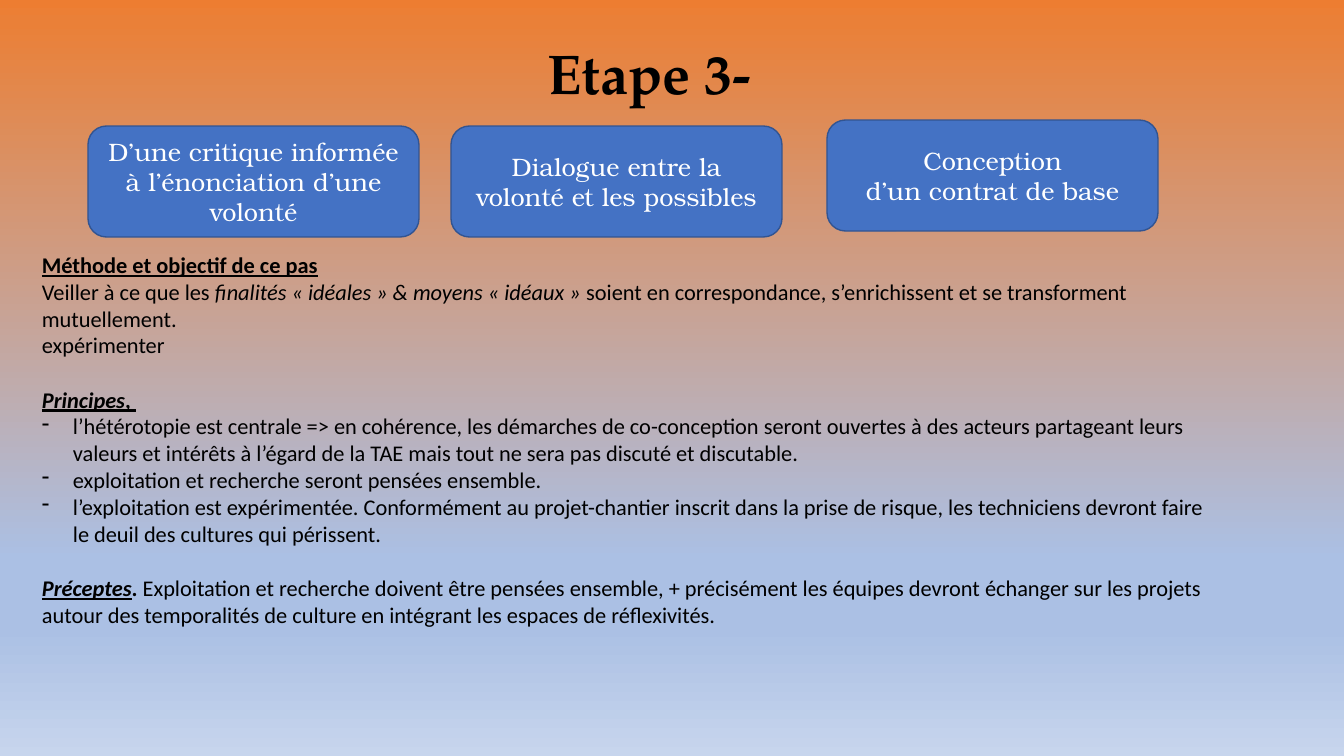
import pptx
import pptx.util
import pptx.dml.color
import pptx.enum.shapes
import pptx.enum.text
import pptx.oxml.ns
from lxml import etree

RGB = pptx.dml.color.RGBColor
BLACK = RGB(0x00, 0x00, 0x00)
WHITE = RGB(0xFF, 0xFF, 0xFF)
BLUE = RGB(0x44, 0x72, 0xC4)
DARK_BLUE = RGB(0x32, 0x54, 0x91)
SKY = [
    (0, RGB(0xED, 0x7D, 0x31)),
    (3, RGB(0xEA, 0x80, 0x38)),
    (74, RGB(0xAB, 0xC0, 0xE4)),
    (83, RGB(0xAB, 0xC0, 0xE4)),
    (100, RGB(0xC7, 0xD5, 0xED)),
]
EMU_PER_PX = 914400 / 100.8
Pt = pptx.util.Pt
qn = pptx.oxml.ns.qn
ALIGN = pptx.enum.text.PP_ALIGN
ANCHOR = pptx.enum.text.MSO_ANCHOR
AUTO_SIZE = pptx.enum.text.MSO_AUTO_SIZE


def px(length):
    return pptx.util.Emu(round(length * EMU_PER_PX))


def style(font, color, **values):
    font.color.rgb = color
    for name, value in values.items():
        setattr(font, name, value)


deck = pptx.Presentation()
deck.slide_width, deck.slide_height = px(1344), px(756)
page = deck.slides.add_slide(deck.slide_layouts[5])

# Background gradient, top to bottom
fill = page.background.fill
fill.gradient()
fill.gradient_angle = 270
stops = next(page.element.iter(qn("a:gsLst")))
for stop in list(stops):
    stops.remove(stop)
for percent, color in SKY:
    stop = etree.SubElement(stops, qn("a:gs"), pos=str(percent * 1000))
    etree.SubElement(stop, qn("a:srgbClr"), val=str(color))

# Title
title = page.shapes.title
title.left, title.top, title.width, title.height = map(px, (32, 33, 1235, 78))
frame = title.text_frame
frame.text = "Etape 3-"
frame.vertical_anchor = ANCHOR.TOP
frame.auto_size = AUTO_SIZE.SHAPE_TO_FIT_TEXT
para = frame.paragraphs[0]
para.alignment = ALIGN.CENTER
style(para.font, BLACK, name="TeX Gyre Pagella", size=Pt(40), bold=True)

# Three steps
STEPS = [
    (88, 126, ["D’une critique informée à l’énonciation d’une volonté"]),
    (451, 126, ["Dialogue entre la volonté et les possibles"]),
    (827, 120, ["Conception", "d’un contrat de base"]),
]
for left, top, lines in STEPS:
    step = page.shapes.add_shape(
        pptx.enum.shapes.MSO_SHAPE.ROUNDED_RECTANGLE,
        px(left), px(top), px(331), px(111))
    step.shadow.inherit = False
    step.fill.solid()
    step.fill.fore_color.rgb = BLUE
    step.line.color.rgb = DARK_BLUE
    step.line.width = Pt(1)
    frame = step.text_frame
    frame.text = "\n".join(lines)
    frame.vertical_anchor = ANCHOR.MIDDLE
    for para in frame.paragraphs:
        para.alignment = ALIGN.CENTER
        style(para.font, WHITE, name="TeX Gyre Bonum", size=Pt(18))

# Body: (kind, runs), each run being (text, format values)
ITALIC = {"italic": True}
BOLD = {"bold": True}
HEADING = {"bold": True, "underline": True}
TERM = {"bold": True, "italic": True, "underline": True}
BODY = [
    ("text", [("Méthode et objectif de ce pas", HEADING)]),
    ("text", [
        ("Veiller à ce que les ", {}),
        ("finalités « idéales » & moyens « idéaux »", ITALIC),
        (" soient en correspondance, s’enrichissent et se transforment mutuellement.", {}),
    ]),
    ("text", [("expérimenter", {})]),
    ("section", [("Principes", TERM), (", ", HEADING)]),
    ("bullet", [(
        "l’hétérotopie est centrale => en cohérence, les démarches de co-conception "
        "seront ouvertes à des acteurs partageant leurs valeurs et intérêts à l’égard "
        "de la TAE mais tout ne sera pas discuté et discutable.", {})]),
    ("bullet", [("exploitation et recherche seront pensées ensemble.", {})]),
    ("bullet", [(
        "l’exploitation est expérimentée. Conformément au projet-chantier inscrit dans "
        "la prise de risque, les techniciens devront faire le deuil des cultures qui "
        "périssent.", {})]),
    ("section", [
        ("Préceptes", TERM),
        (". ", BOLD),
        ("Exploitation et recherche doivent être pensées ensemble, + précisément les "
         "équipes devront échanger sur les projets autour des temporalités de culture "
         "en intégrant les espaces de réflexivités.", {}),
    ]),
]
body = page.shapes.add_textbox(px(32), px(246), px(1182), px(417))
frame = body.text_frame
frame.word_wrap = True
frame.auto_size = AUTO_SIZE.SHAPE_TO_FIT_TEXT
for index, (kind, runs) in enumerate(BODY):
    para = frame.add_paragraph() if index else frame.paragraphs[0]
    if kind == "section":
        para.space_before = Pt(19.5)
    elif kind == "bullet":
        properties = para._p.get_or_add_pPr()
        properties.set("marL", str(px(31)))
        properties.set("indent", str(-px(31)))
        etree.SubElement(properties, qn("a:buFontTx"))
        etree.SubElement(properties, qn("a:buChar"), char="-")
    for text, values in runs:
        span = para.add_run()
        span.text = text
        style(span.font, BLACK, name="Calibri", size=Pt(16), **values)

deck.save("out.pptx")
